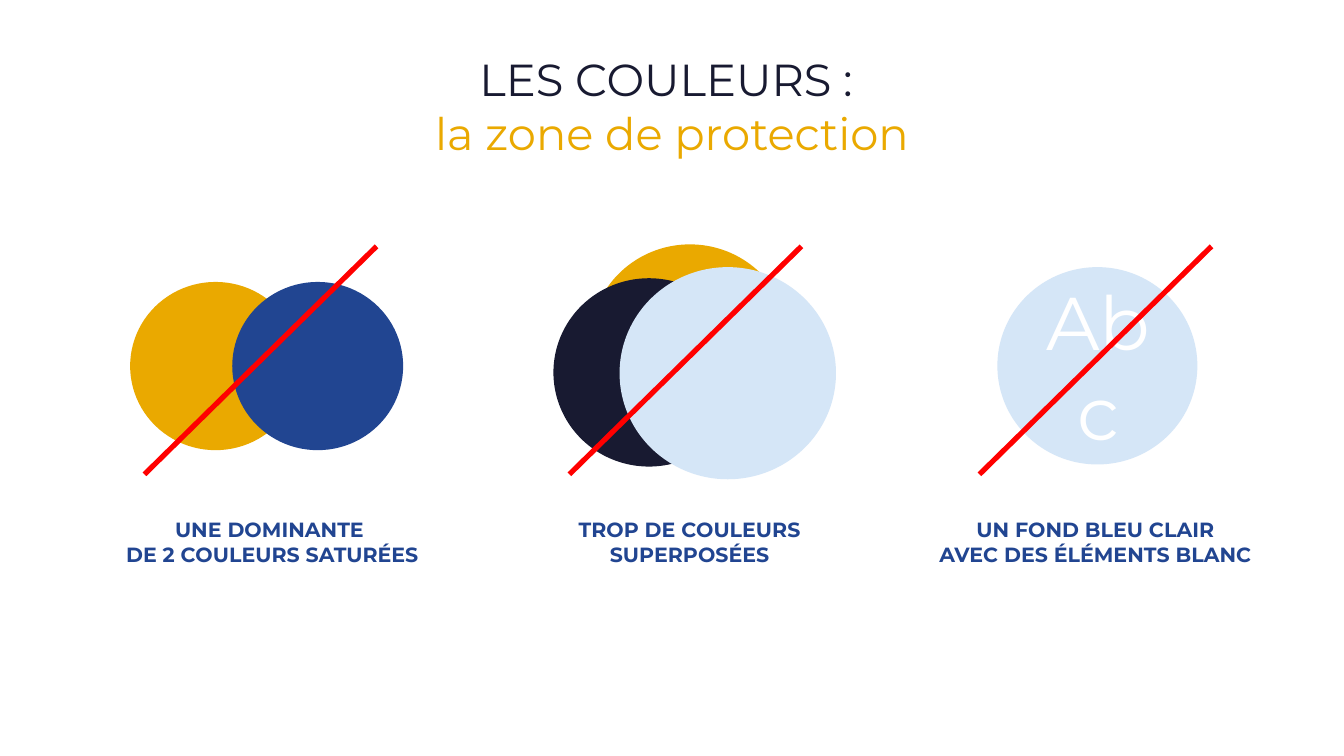
from pptx import Presentation, util as u
from pptx.dml.color import RGBColor
from pptx.enum import shapes, text

THEME = {
    "font": "Montserrat",
    "gold": "EAA900", "blue": "214591", "navy": "181A31",
    "pale": "D5E6F7", "red": "FF0000", "white": "FFFFFF",
    "title": 24, "caption": 11, "sample": 40,
}

# Content: lengths in cm, boxes as (left, top, width, height)
TITLE = [("LES COULEURS : ", "navy"), ("la zone de protection", "gold")]
PANELS = [
    {
        "circles": [("gold", (2.46, 5.33, 3.23, 3.18)),
                    ("blue", (4.39, 5.33, 3.23, 3.18))],
        "bar_left": 1.85,
        "caption": "UNE DOMINANTE \vDE 2 COULEURS SATURÉES",
        "caption_box": (1.52, 9.58, 7.26, 4.01),
    },
    {
        "circles": [("gold", (11.15, 4.62, 3.78, 3.73)),
                    ("navy", (10.46, 5.26, 3.61, 3.56)),
                    ("pale", (11.71, 5.05, 4.09, 4.01))],
        "bar_left": 9.88,
        "caption": "TROP DE COULEURS SUPERPOSÉES",
        "caption_box": (9.63, 9.58, 6.81, 2.24),
    },
    {
        "circles": [("pale", (18.85, 5.05, 3.78, 3.73))],
        "sample": "Abc",
        "sample_box": (19.23, 5.92, 3.05, 1.98),
        "bar_left": 17.63,
        "caption": "UN FOND BLEU CLAIR\vAVEC DES ÉLÉMENTS BLANC",
        "caption_box": (17.3, 9.58, 6.81, 1.65),
    },
]
BAR_TOP, BAR_WIDTH, BAR_HEIGHT, BAR_ANGLE = 6.76, 6.15, 0.1, 315.5
PAGE_WIDTH, PAGE_HEIGHT = 25.4, 14.29


def colour(name):
    return RGBColor.from_string(THEME[name])


def add_filled(page, kind, bounds, fill):
    shape = page.shapes.add_shape(kind, *map(u.Cm, bounds))
    shape.shadow.inherit = False
    shape.fill.solid()
    shape.fill.fore_color.rgb = colour(fill)
    shape.line.fill.background()
    return shape


def add_text(page, bounds, lines, size, bold=False, anchor=text.MSO_ANCHOR.TOP):
    """Add centred text; lines holds one (wording, colour) pair per paragraph."""
    frame = page.shapes.add_textbox(*map(u.Cm, bounds)).text_frame
    frame.word_wrap = True
    frame.vertical_anchor = anchor
    frame.margin_left = frame.margin_right = u.Cm(0.2)
    frame.margin_top = frame.margin_bottom = u.Cm(0.2)
    frame.text = "\n".join(wording for wording, _ in lines)
    for para, (_, ink) in zip(frame.paragraphs, lines):
        para.alignment = text.PP_ALIGN.CENTER
        for span in para.runs:
            span.font.name = THEME["font"]
            span.font.size = u.Pt(THEME[size])
            span.font.bold = bold
            span.font.color.rgb = colour(ink)


def add_panel(page, panel):
    # Circles, with sample lettering where there is some
    for fill, bounds in panel["circles"]:
        add_filled(page, shapes.MSO_SHAPE.OVAL, bounds, fill)
    if "sample" in panel:
        add_text(page, panel["sample_box"], [(panel["sample"], "white")],
                 "sample", anchor=text.MSO_ANCHOR.MIDDLE)

    # Red strike-through bar
    bounds = (panel["bar_left"], BAR_TOP, BAR_WIDTH, BAR_HEIGHT)
    bar = add_filled(page, shapes.MSO_SHAPE.RECTANGLE, bounds, "red")
    bar.rotation = BAR_ANGLE

    # Caption
    add_text(page, panel["caption_box"], [(panel["caption"], "blue")],
             "caption", bold=True)


def main():
    deck = Presentation()
    deck.slide_width, deck.slide_height = u.Cm(PAGE_WIDTH), u.Cm(PAGE_HEIGHT)
    page = deck.slides.add_slide(deck.slide_layouts[6])
    for panel in PANELS:
        add_panel(page, panel)
    add_text(page, (0, 0.61, PAGE_WIDTH, 2.77), TITLE, "title",
             anchor=text.MSO_ANCHOR.MIDDLE)
    deck.save("out.pptx")


if __name__ == "__main__":
    main()
